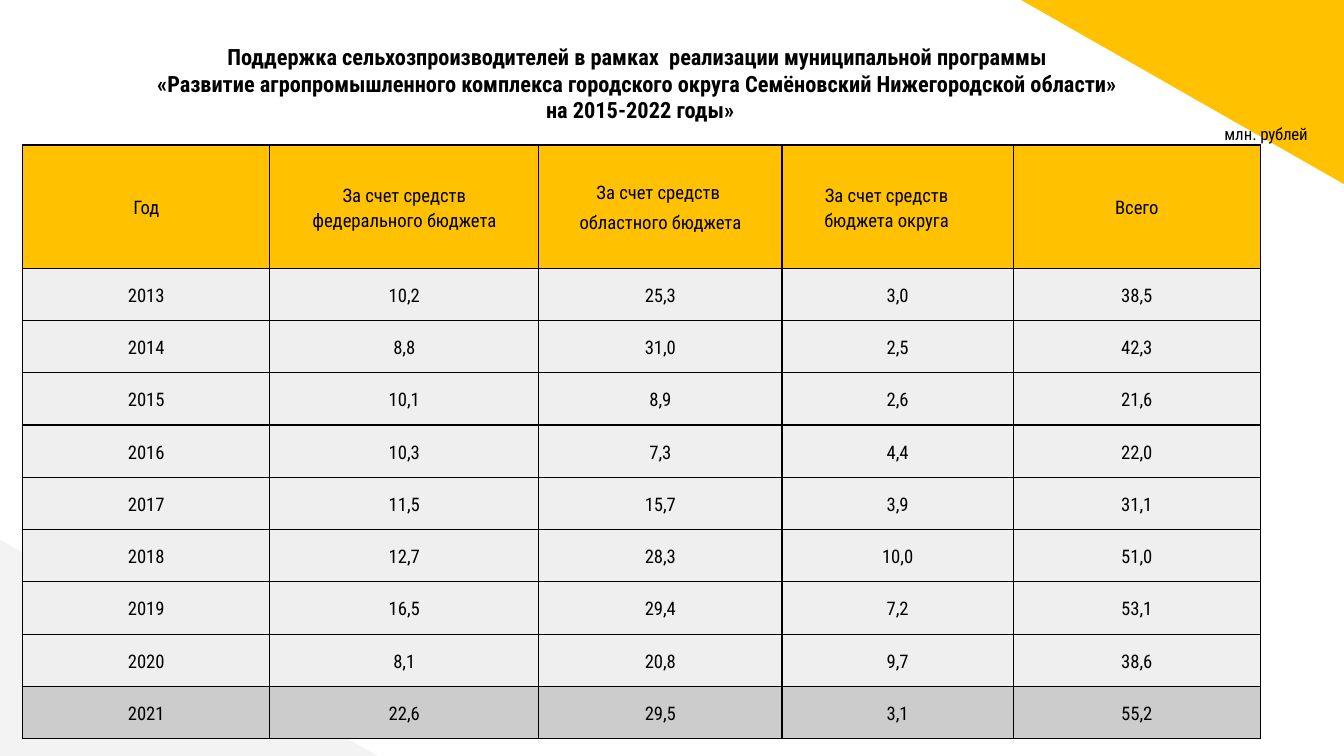
from lxml import etree
from pptx import Presentation
from pptx import util as u
from pptx.dml.color import RGBColor
from pptx.enum import shapes, text
from pptx.oxml import ns


def colour(hex_code):
    return RGBColor.from_string(hex_code)


class SlideBuilder:
    font_name = "Roboto Condensed"
    ink = "000000"
    yellow = "FFC100"
    pale = "F3F3F3"
    body_fill = "EFEFEF"
    last_fill = "CCCCCC"
    inset = u.Cm(0.25)

    def __init__(self, deck):
        self.slide = deck.slides.add_slide(deck.slide_layouts[6])

    def run(self, paragraph, wording, size, bold=False):
        run = paragraph.add_run()
        run.text = wording
        run.font.name = self.font_name
        run.font.size = u.Pt(size)
        run.font.bold = bold
        run.font.color.rgb = colour(self.ink)
        return run

    def corner(self, left, top, width, height, fill, rotation=0):
        corner = self.slide.shapes.add_shape(
            shapes.MSO_SHAPE.RIGHT_TRIANGLE, u.Cm(left), u.Cm(top), u.Cm(width), u.Cm(height))
        corner.rotation = rotation
        corner.shadow.inherit = False
        corner.fill.solid()
        corner.fill.fore_color.rgb = colour(fill)
        corner.line.fill.background()

    def frame(self, left, top, width, height, inset=0):
        box = self.slide.shapes.add_textbox(u.Cm(left), u.Cm(top), u.Cm(width), u.Cm(height))
        frame = box.text_frame
        frame.word_wrap = True
        frame.vertical_anchor = text.MSO_ANCHOR.TOP
        frame.margin_left = frame.margin_right = inset
        frame.margin_top = frame.margin_bottom = inset
        return frame

    def title(self, lines):
        paragraph = self.frame(1.09, 0.56, 22.02, 2.18, self.inset).paragraphs[0]
        paragraph.alignment = text.PP_ALIGN.CENTER
        for index, line in enumerate(lines):
            if index:
                paragraph.add_line_break()
            self.run(paragraph, line, 12, bold=True)

    def unit_note(self):
        frame = self.frame(23.11, 2.31, 2.2, 0.43)
        frame.margin_top = u.Cm(0.03)
        paragraph = frame.paragraphs[0]
        paragraph._p.get_or_add_pPr().set("marL", str(u.Cm(0.03)))
        self.run(paragraph, "млн.", 9)
        unit = self.run(paragraph, " рублей", 9)
        unit.font._element.set("spc", "-10")

    def borders(self, cell):
        properties = cell._tc.get_or_add_tcPr()
        for position, side in enumerate(("lnL", "lnR", "lnT", "lnB")):
            line = etree.Element(ns.qn("a:" + side), w=str(u.Pt(0.75)))
            fill = etree.SubElement(line, ns.qn("a:solidFill"))
            etree.SubElement(fill, ns.qn("a:srgbClr"), val=self.ink)
            properties.insert(position, line)

    def cell(self, cell, lines, fill):
        cell.fill.solid()
        cell.fill.fore_color.rgb = colour(fill)
        cell.vertical_anchor = text.MSO_ANCHOR.MIDDLE
        cell.margin_left = cell.margin_right = self.inset
        cell.margin_top = cell.margin_bottom = self.inset
        self.borders(cell)
        frame = cell.text_frame
        for index, line in enumerate(lines):
            paragraph = frame.add_paragraph() if index else frame.paragraphs[0]
            paragraph.alignment = text.PP_ALIGN.CENTER
            paragraph.line_spacing = 1.15
            paragraph.space_before = u.Pt(3 if index else 0)
            self.run(paragraph, line, 10)

    def table(self, headings, years):
        widths = (4.67, 5.08, 4.6, 4.37, 4.67)
        heights = [2.33] + [0.98] * len(years)
        table = self.slide.shapes.add_table(
            len(heights), len(widths), u.Cm(0.43), u.Cm(2.74),
            u.Cm(sum(widths)), u.Cm(sum(heights))).table
        for column, width in zip(table.columns, widths):
            column.width = u.Cm(width)
        for row, height in zip(table.rows, heights):
            row.height = u.Cm(height)
        for column, heading in enumerate(headings):
            self.cell(table.cell(0, column), heading, self.yellow)
        for row, figures in enumerate(years, 1):
            fill = self.last_fill if row == len(years) else self.body_fill
            for column, figure in enumerate(figures.split()):
                self.cell(table.cell(row, column), [figure], fill)
        return table


def main():
    deck = Presentation()
    deck.slide_width = u.Cm(25.4)
    deck.slide_height = u.Cm(14.29)
    builder = SlideBuilder(deck)
    builder.corner(0, 10.2, 7.14, 4.09, builder.pale)
    builder.corner(19.3, 0, 6.1, 3.48, builder.yellow, rotation=180)
    builder.title([
        "Поддержка сельхозпроизводителей в рамках  реализации муниципальной программы ",
        "«Развитие агропромышленного комплекса городского округа Семёновский Нижегородской области» ",
        "на 2015-2022 годы»",
    ])
    headings = [
        ["Год"],
        ["За счет средств", "федерального бюджета"],
        ["За счет средств ", "областного бюджета"],
        ["За счет средств бюджета округа"],
        ["Всего"],
    ]
    years = [
        "2013 10,2 25,3 3,0 38,5",
        "2014 8,8 31,0 2,5 42,3",
        "2015 10,1 8,9 2,6 21,6",
        "2016 10,3 7,3 4,4 22,0",
        "2017 11,5 15,7 3,9 31,1",
        "2018 12,7 28,3 10,0 51,0",
        "2019 16,5 29,4 7,2 53,1",
        "2020 8,1 20,8 9,7 38,6",
        "2021 22,6 29,5 3,1 55,2",
    ]
    support = builder.table(headings, years)
    federal = support.cell(0, 1).text_frame.paragraphs[1]
    federal.space_before = u.Pt(0)
    district = support.cell(0, 3).text_frame.paragraphs[0]
    district._p.get_or_add_pPr().set("marR", str(u.Cm(0.42)))
    builder.unit_note()
    deck.save("out.pptx")


if __name__ == "__main__":
    main()
